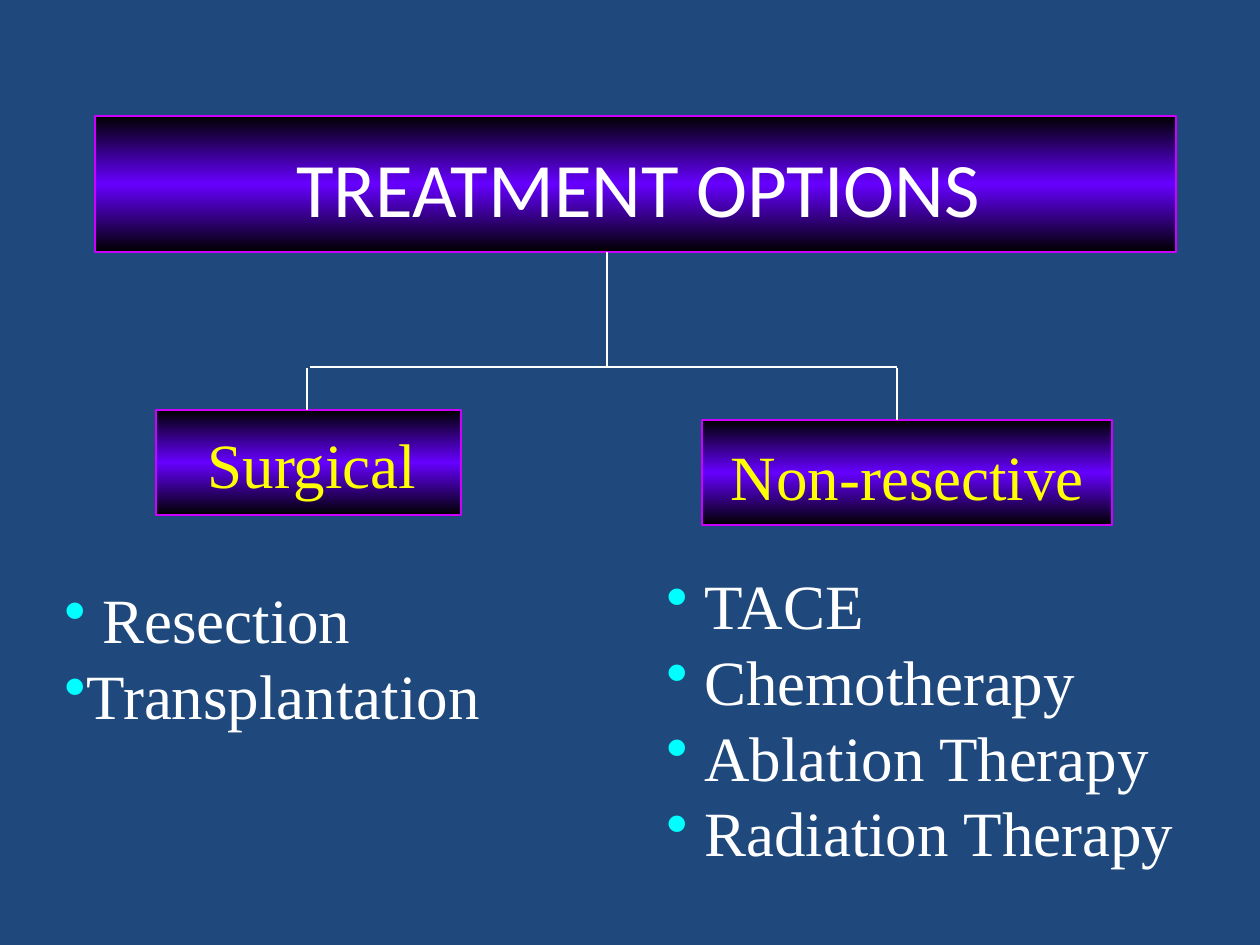
from copy import deepcopy

from pptx import Presentation
from pptx.dml.color import RGBColor
from pptx.enum.shapes import MSO_CONNECTOR as CONN, MSO_SHAPE as SHAPE
from pptx.enum.text import MSO_ANCHOR as ANCHOR, PP_ALIGN as ALIGN
from pptx.oxml.ns import qn
from pptx.util import Emu, Pt
from lxml.etree import SubElement

SCALE = 914400 / 126
NAVY, BLACK, VIOLET, MAGENTA = "1F497D", "000000", "6600FF", "CC00FF"
WHITE, YELLOW, CYAN = "FFFFFF", "FFFF00", "00FFFF"


def px(n):
    return Emu(round(n * SCALE))


def rgb(value):
    return RGBColor.from_string(value)


def write(p, text, size=36, font="Times New Roman", color=WHITE,
          align=ALIGN.LEFT, spacing=None):
    p.alignment = align
    p.line_spacing = spacing
    r = p.add_run()
    r.text = text
    r.font.size, r.font.name = Pt(size), font
    r.font.color.rgb = rgb(color)


class Deck:
    line_width = Pt(0.75)
    spacing = Pt(43.2)

    def __init__(self, prs):
        self.slide = prs.slides.add_slide(prs.slide_layouts[6])
        fill = self.slide.background.fill
        fill.solid()
        fill.fore_color.rgb = rgb(NAVY)

    def panel(self, x, y, w, h):
        s = self.slide.shapes.add_shape(SHAPE.RECTANGLE, px(x), px(y), px(w), px(h))
        s.shadow.inherit = False
        s.line.color.rgb = rgb(MAGENTA)
        s.line.width = self.line_width
        s.fill.gradient()
        s.fill.gradient_angle = 90
        stops = s._element.spPr.find(qn("a:gradFill")).find(qn("a:gsLst"))
        stops.insert(1, deepcopy(stops[0]))
        for stop, position, color in zip(s.fill.gradient_stops, (0, 0.5, 1),
                                         (BLACK, VIOLET, BLACK)):
            stop.position = position
            stop.color.rgb = rgb(color)

    def line(self, x1, y1, x2, y2):
        c = self.slide.shapes.add_connector(CONN.STRAIGHT, px(x1), px(y1), px(x2), px(y2))
        c.line.color.rgb = rgb(WHITE)
        c.line.width = self.line_width
        SubElement(c._element.spPr, qn("a:effectLst"))

    def frame(self, x, y, w, h):
        tf = self.slide.shapes.add_textbox(px(x), px(y), px(w), px(h)).text_frame
        tf.word_wrap = True
        return tf

    def title(self, text, *box):
        tf = self.frame(*box)
        tf.vertical_anchor = ANCHOR.MIDDLE
        write(tf.paragraphs[0], text, size=44, font="Calibri", align=ALIGN.CENTER)

    def heading(self, text, *box):
        tf = self.frame(*box)
        tf.margin_top, tf.margin_bottom = px(10), px(2)
        write(tf.paragraphs[0], text, color=YELLOW, align=ALIGN.CENTER,
              spacing=self.spacing)

    def bullets(self, items, *box):
        tf = self.frame(*box)
        tf.margin_top, tf.margin_bottom = px(10), px(2)
        for i, (text, hang) in enumerate(items):
            p = tf.add_paragraph() if i else tf.paragraphs[0]
            write(p, text, spacing=self.spacing)
            pPr = p._p.get_or_add_pPr()
            pPr.set("marL", str(px(hang)))
            pPr.set("indent", str(-px(hang)))
            color = SubElement(pPr, qn("a:buClr"))
            SubElement(color, qn("a:srgbClr")).set("val", CYAN)
            SubElement(pPr, qn("a:buChar")).set("char", "•")


def main():
    prs = Presentation()
    prs.slide_width, prs.slide_height = px(1260), px(945)
    deck = Deck(prs)

    # Gradient panels
    deck.panel(702, 420, 410, 105)
    deck.panel(156, 410, 305, 105)
    deck.panel(95, 116, 1081, 136)
    deck.title("TREATMENT OPTIONS", 88, 107, 1101, 160)

    # Branches from the title to both groups
    deck.line(607, 252, 607, 368)
    deck.line(310, 367, 897, 367)
    deck.line(307, 368, 307, 410)
    deck.line(897, 368, 897, 420)

    # Group headings
    deck.heading("Surgical", 174, 416, 276, 88)
    deck.heading("Non-resective", 707, 428, 401, 88)

    # Options, each with its hanging indent
    wide, tight = 38, 22
    deck.bullets([("Resection", wide), ("Transplantation", tight)], 52, 571, 495, 164)
    options = ["TACE", "Chemotherapy", "Ablation Therapy", "Radiation Therapy"]
    deck.bullets([(text, wide) for text in options], 654, 557, 556, 315)

    prs.save("out.pptx")


if __name__ == "__main__":
    main()
